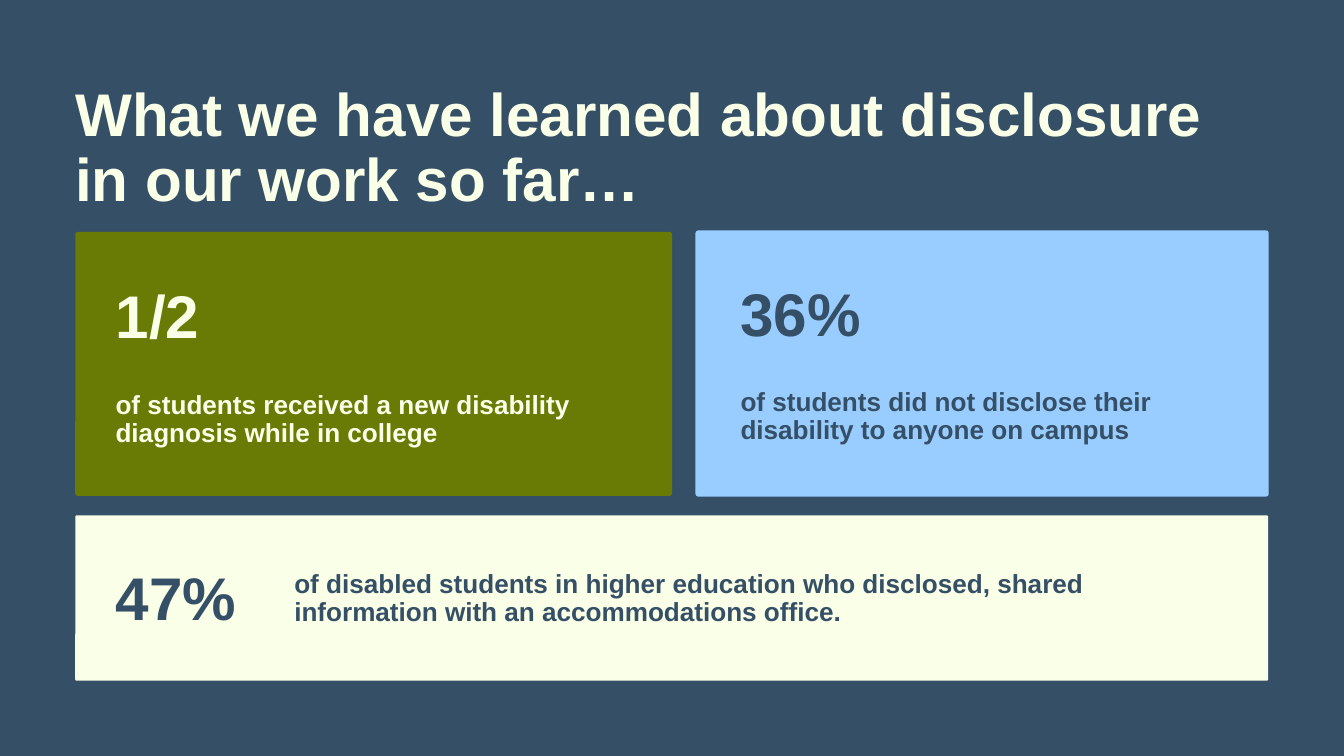
from pptx import Presentation
from pptx.dml.color import RGBColor
from pptx.enum.shapes import MSO_SHAPE
from pptx.enum.text import MSO_ANCHOR, MSO_AUTO_SIZE, PP_ALIGN
from pptx.util import Inches, Pt

COLORS = {
    "navy": "354F66",
    "green": "697A05",
    "blue": "99CCFF",
    "cream": "FAFFE7",
}
BIG, SMALL = (64.5, 69.7), (28, 30.2)  # font size, line spacing


def rgb(name):
    return RGBColor.from_string(COLORS[name])


def write(sp, text, style, color):
    """Fill a text shape with one bold, left-aligned paragraph."""
    size, spacing = style
    tf = sp.text_frame
    tf.word_wrap = True
    tf.auto_size = MSO_AUTO_SIZE.NONE
    tf.vertical_anchor = MSO_ANCHOR.TOP
    tf.margin_left = tf.margin_right = tf.margin_top = tf.margin_bottom = 0
    tf.text = text
    p = tf.paragraphs[0]
    p.alignment = PP_ALIGN.LEFT
    p.line_spacing = Pt(spacing)
    font = p.runs[0].font
    font.name, font.size, font.bold = "Arial", Pt(size), True
    font.color.rgb = rgb(color)


def add_title(slide, box, text):
    sp = slide.shapes.title
    sp.left, sp.top, sp.width, sp.height = (Inches(v) for v in box)
    write(sp, text, BIG, "cream")


def add_card(slide, box, radius, fill, color, number, label):
    """Draw a card; number and label are (text, box relative to the card)."""
    left, top, width, height = box
    card = slide.shapes.add_shape(MSO_SHAPE.ROUNDED_RECTANGLE,
                                  *(Inches(v) for v in box))
    card.adjustments[0] = radius / min(width, height)
    card.shadow.inherit = False
    card.fill.solid()
    card.fill.fore_color.rgb = rgb(fill)
    card.line.fill.background()
    for (text, (dx, dy, w, h)), style in ((number, BIG), (label, SMALL)):
        sp = slide.shapes.add_textbox(Inches(left + dx), Inches(top + dy),
                                      Inches(w), Inches(h))
        write(sp, text, style, color)


def main():
    prs = Presentation()
    prs.slide_width, prs.slide_height = Inches(20), Inches(11.25)
    s = prs.slides.add_slide(prs.slide_layouts[5])
    s.background.fill.solid()
    s.background.fill.fore_color.rgb = rgb("navy")

    # Title
    add_title(s, (1.12, 1.24, 17.49, 2.1),
              "What we have learned about disclosure in our work so far…")

    # Upper row: two cards
    add_card(s, (1.12, 3.45, 8.88, 3.93), 0.04, "green", "cream",
             ("1/2", (0.6, 0.8, 2.35, 0.98)),
             ("of students received a new disability diagnosis while in college",
              (0.6, 2.37, 7.17, 0.85)))
    add_card(s, (10.35, 3.43, 8.53, 3.96), 0.04, "blue", "navy",
             ("36%", (0.67, 0.79, 3.56, 0.98)),
             ("of students did not disclose their disability to anyone on campus",
              (0.67, 2.35, 6.49, 0.85)))

    # Lower row: full-width card
    add_card(s, (1.12, 7.67, 17.75, 2.46), 0.02, "cream", "navy",
             ("47%", (0.6, 0.78, 2.5, 0.98)),
             ("of disabled students in higher education who disclosed, "
              "shared information with an accommodations office.",
              (3.26, 0.82, 11.93, 0.84)))

    prs.save("out.pptx")


if __name__ == "__main__":
    main()
